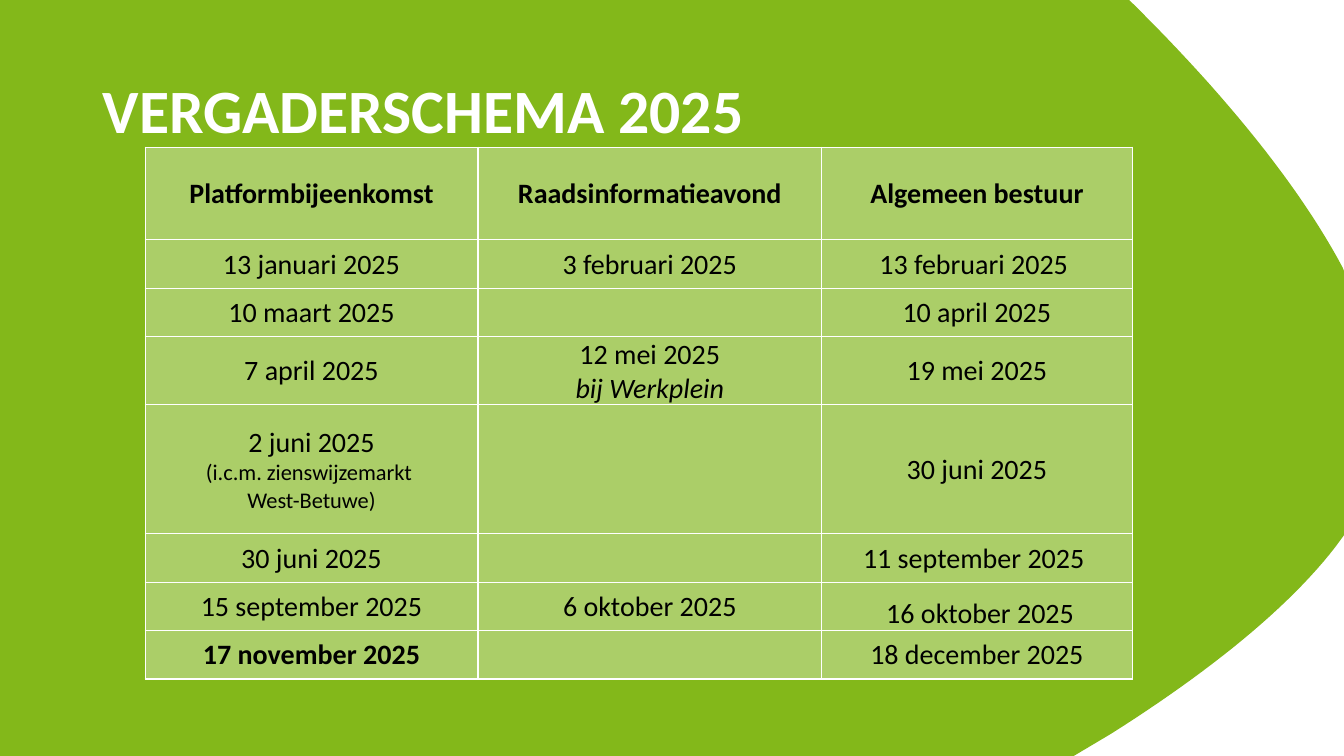
from lxml import etree
from pptx import Presentation
from pptx.dml.color import RGBColor
from pptx.enum.text import MSO_ANCHOR, PP_ALIGN
from pptx.oxml.ns import qn
from pptx.util import Inches, Pt

MIDDLE, BOTTOM = MSO_ANCHOR.MIDDLE, MSO_ANCHOR.BOTTOM
CENTER = PP_ALIGN.CENTER
GREEN = RGBColor(0x83, 0xB8, 0x1A)
PALE = RGBColor(0xED, 0xF3, 0xE8)
WHITE = RGBColor(0xFF, 0xFF, 0xFF)
BLACK = RGBColor(0, 0, 0)
FONT = "Calibri"
WIDTH, HEIGHT = 13.33, 7.5

TITLE = "VERGADERSCHEMA 2025"
# Each cell holds its lines of text.
SCHEDULE = [
    [["Platformbijeenkomst"], ["Raadsinformatieavond"], ["Algemeen bestuur"]],
    [["13 januari 2025"], ["3 februari 2025"], ["13 februari 2025 "]],
    [["10 maart 2025"], [], ["10 april 2025"]],
    [["7 april 2025"], ["12 mei 2025", "bij Werkplein"], ["19 mei 2025"]],
    [["2 juni 2025", "(i.c.m. zienswijzemarkt ", "West-Betuwe)"], [], ["30 juni 2025"]],
    [["30 juni 2025"], [], ["11 september 2025 "]],
    [["15 september 2025"], ["6 oktober 2025"], [" 16 oktober 2025"]],
    [["17 november 2025"], [], ["18 december 2025"]],
]
COLUMN_WIDTHS = [3.3, 3.41, 3.08]
ROW_HEIGHT = 0.48
TALL_ROWS = {0: 0.92, 4: 1.28}
BOLD_CELLS = {(0, 0), (0, 1), (0, 2), (7, 0)}
BOTTOM_CELLS = {(3, 1), (6, 2)}
ITALIC_LINES = {"bij Werkplein"}
SMALL_LINES = set(SCHEDULE[4][0][1:])

# Right edge of the green field: straight points, and Bézier curves of three points.
EDGE = [
    [(11.2, 0)],
    [(11.24, 0.04)],
    [(12.16, 0.95), (12.89, 1.85), (13.32, 2.66)],
    [(WIDTH, 2.69)],
    [(WIDTH, 5.31)],
    [(13.25, 5.42)],
    [(12.78, 6.03), (12, 6.66), (11.02, 7.28)],
    [(10.65, HEIGHT)],
]
CURVE_STEPS = 24


def trace(edge):
    """Turn the edge into points, with each curve cut into short lines."""
    points = []
    for step in edge:
        if len(step) == 1:
            points += step
            continue
        a, (b, c, d) = points[-1], step
        for i in range(1, CURVE_STEPS + 1):
            t = i / CURVE_STEPS
            u = 1 - t
            points.append(tuple(
                u**3 * a[k] + 3 * u * u * t * b[k] + 3 * u * t * t * c[k] + t**3 * d[k]
                for k in (0, 1)))
    return points


def add_green_field(s):
    builder = s.shapes.build_freeform(0, 0, scale=1.0)
    corners = trace(EDGE) + [(0, HEIGHT)]
    builder.add_line_segments([(Inches(x), Inches(y)) for x, y in corners])
    sp = builder.convert_to_shape()
    sp.shadow.inherit = False
    sp.fill.solid()
    sp.fill.fore_color.rgb = GREEN
    sp.line.fill.background()


def add_title(s):
    tf = s.shapes.add_textbox(Inches(0.92), Inches(0.4), Inches(11.5), Inches(1.45)).text_frame
    tf.word_wrap = True
    tf.vertical_anchor = MIDDLE
    p = tf.paragraphs[0]
    p.text = TITLE
    p.line_spacing = 0.9
    style_font(p.font, 44, WHITE, bold=True)


def style_font(font, size, color, bold=False, italic=False):
    font.name = FONT
    font.size = Pt(size)
    font.color.rgb = color
    font.bold = bold
    font.italic = italic


def paint_cell(cell):
    """White borders and a see-through pale fill."""
    tcPr = cell._tc.get_or_add_tcPr()
    for side in ("a:lnL", "a:lnR", "a:lnT", "a:lnB"):
        ln = etree.SubElement(tcPr, qn(side), w=str(Pt(1)))
        fill = etree.SubElement(ln, qn("a:solidFill"))
        etree.SubElement(fill, qn("a:srgbClr"), val=str(WHITE))
    cell.fill.solid()
    cell.fill.fore_color.rgb = PALE
    color = tcPr.find(qn("a:solidFill")).find(qn("a:srgbClr"))
    etree.SubElement(color, qn("a:alpha"), val="38000")


def fill_cell(cell, lines, bold, anchor):
    cell.margin_left = cell.margin_right = cell.margin_top = Inches(0.01)
    cell.margin_bottom = 0
    cell.vertical_anchor = anchor
    tf = cell.text_frame
    for i, line in enumerate(lines):
        p = tf.add_paragraph() if i else tf.paragraphs[0]
        p.text = line
        p.alignment = CENTER
        size = 16 if line in SMALL_LINES else 20
        style_font(p.font, size, BLACK, bold, line in ITALIC_LINES)


def add_schedule(s):
    heights = [TALL_ROWS.get(r, ROW_HEIGHT) for r in range(len(SCHEDULE))]
    table = s.shapes.add_table(
        len(heights), len(COLUMN_WIDTHS), Inches(1.44), Inches(1.46),
        Inches(sum(COLUMN_WIDTHS)), Inches(sum(heights))).table
    table.first_row = table.horz_banding = False
    for column, width in zip(table.columns, COLUMN_WIDTHS):
        column.width = Inches(width)
    for r, row in enumerate(SCHEDULE):
        table.rows[r].height = Inches(heights[r])
        for c, lines in enumerate(row):
            cell = table.cell(r, c)
            paint_cell(cell)
            anchor = BOTTOM if (r, c) in BOTTOM_CELLS else MIDDLE
            fill_cell(cell, lines, (r, c) in BOLD_CELLS, anchor)


def main():
    prs = Presentation()
    prs.slide_width, prs.slide_height = Inches(WIDTH), Inches(HEIGHT)
    s = prs.slides.add_slide(prs.slide_layouts[6])
    add_green_field(s)
    add_title(s)
    add_schedule(s)
    prs.save("out.pptx")


if __name__ == "__main__":
    main()
